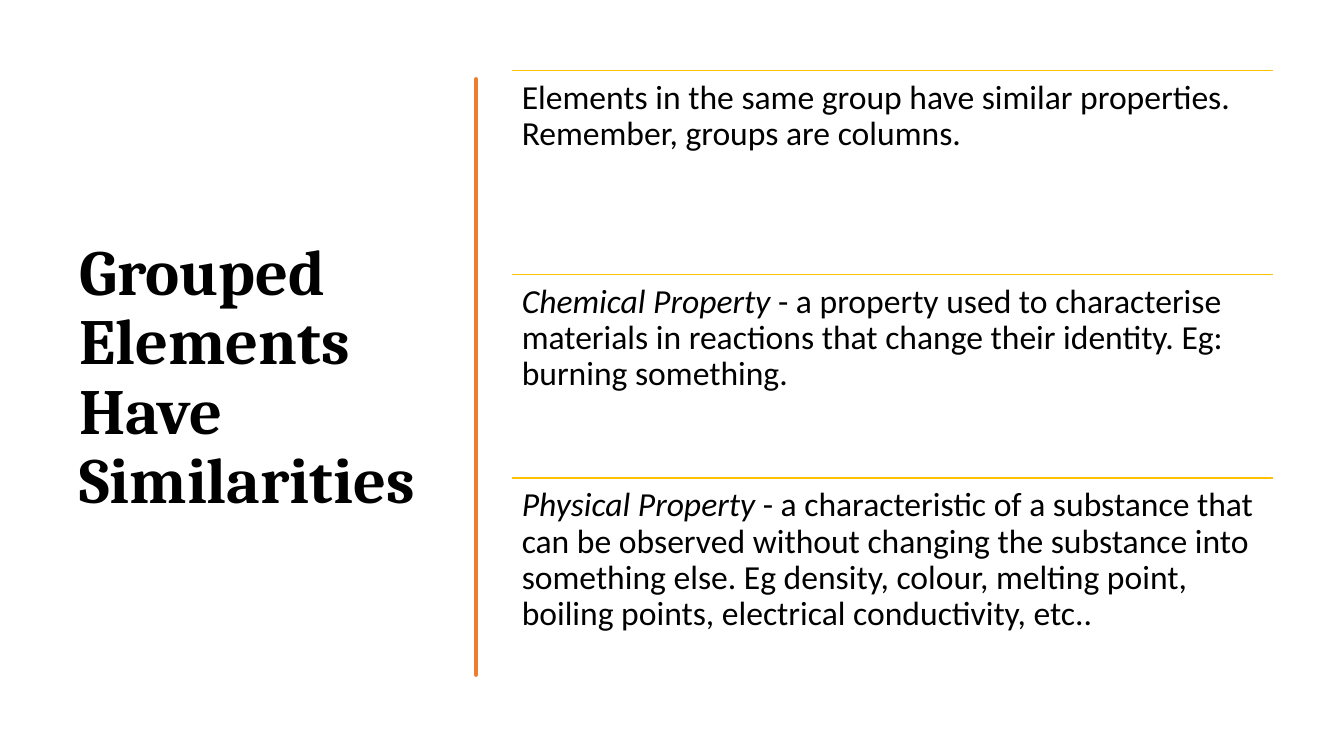
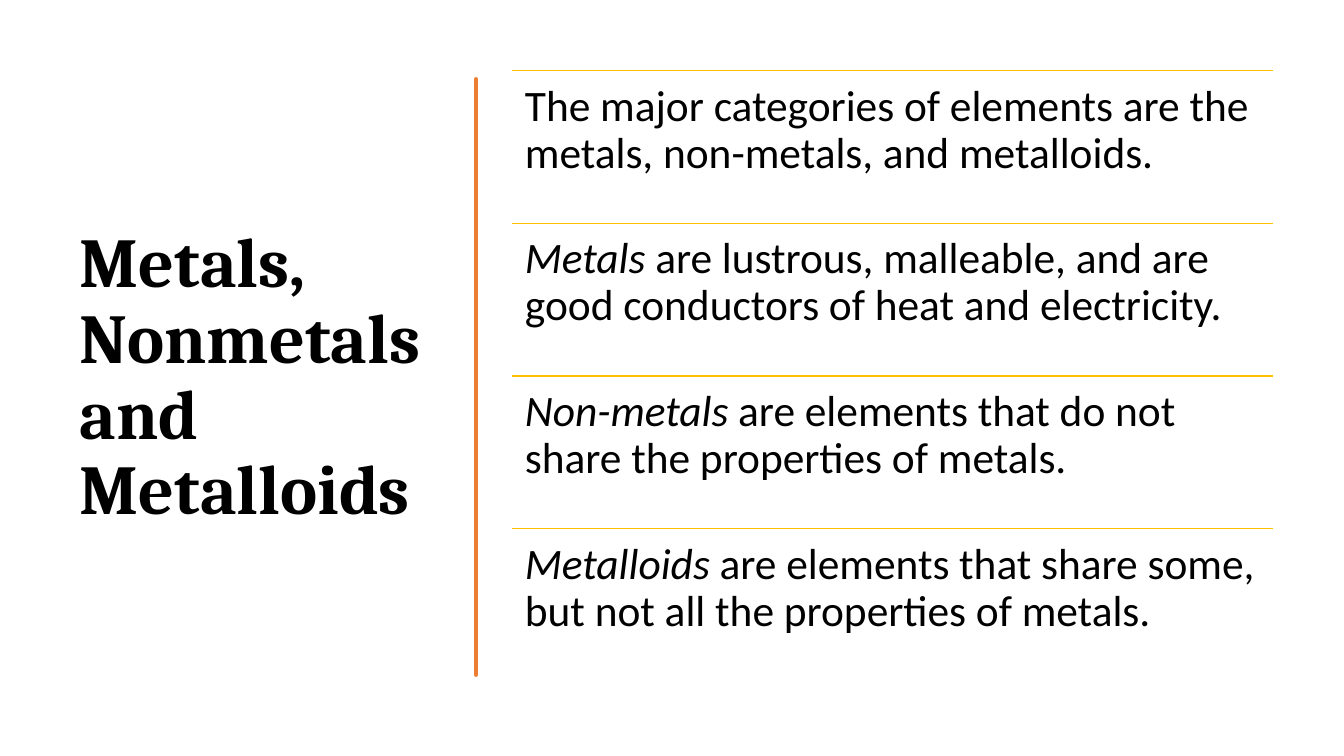
"""Build two slides on element groups: a title, a brush stroke and ruled rows."""
from lxml import etree
from pptx import Presentation, util as u
from pptx.dml.color import RGBColor
from pptx.enum import shapes, text
from pptx.oxml.ns import qn

HUES = {"ink": "000000", "brush": "ED7D31", "rule": "FFC000"}
LEFT, TOP, WIDE, TALL = 12.9, 1.78, 19.18, 15.39
RIM = [(12.07, 2.13), (12.1, 2.9), (12.1, 3.4), (12.04, 4.4), (12.06, 5.7),
       (12.05, 6.6), (12.09, 8.4), (12.07, 9.1), (12.12, 10.4), (12.1, 11.0),
       (12.05, 11.8), (12.06, 12.4), (12.11, 13.6), (12.07, 14.8),
       (12.05, 15.6), (12.07, 17.17), (12.01, 17.17), (12.0, 15.6),
       (12.02, 14.2), (12.0, 12.9), (12.02, 11.6), (11.99, 10.6),
       (12.03, 9.2), (11.99, 7.9), (12.01, 6.4), (12.02, 5.1),
       (11.98, 4.4), (12.03, 3.2), (12.01, 2.13)]
DECK = [
    {"title": "Grouped Elements Have Similarities",
     "head": 46, "size": 24, "pad": 0.25,
     "rows": [
         ("", "Elements in the same group have similar properties. "
              "Remember, groups are columns."),
         ("Chemical Property",
          " - a property used to characterise materials in reactions that "
          "change their identity. Eg: burning something."),
         ("Physical Property",
          " - a characteristic of a substance that can be observed without "
          "changing the substance into something else. Eg density, colour, "
          "melting point, boiling points, electrical conductivity, etc.."),
     ]},
    {"title": "Metals, Nonmetals and Metalloids",
     "head": 50, "size": 31, "pad": 0.33,
     "rows": [
         ("", "The major categories of elements are the metals, non-metals, "
              "and metalloids."),
         ("Metals", " are lustrous, malleable, and are good conductors of "
                    "heat and electricity."),
         ("Non-metals", " are elements that do not share the properties "
                        "of metals."),
         ("Metalloids", " are elements that share some, but not all the "
                        "properties of metals."),
     ]},
]


def style(item, form):
    """Set each format value on an object."""
    for name, value in form.items():
        setattr(item, name, value)


def write(part, words, form):
    """Add a run of text in the ink colour."""
    run = part.add_run()
    run.text = words
    style(run.font, form)
    run.font.color.rgb = RGBColor.from_string(HUES["ink"])


deck = Presentation()
style(deck, {"slide_width": u.Cm(33.87), "slide_height": u.Cm(19.05)})

for page in DECK:
    slide = deck.slides.add_slide(deck.slide_layouts[5])
    title = slide.shapes.title
    style(title, {"left": u.Cm(1.75), "top": u.Cm(TOP),
                  "width": u.Cm(9.5), "height": u.Cm(15.52)})
    style(title.text_frame, {"word_wrap": True,
                             "auto_size": text.MSO_AUTO_SIZE.NONE,
                             "vertical_anchor": text.MSO_ANCHOR.MIDDLE})
    para = title.text_frame.paragraphs[0]
    style(para, {"alignment": text.PP_ALIGN.LEFT, "line_spacing": 0.9})
    write(para, page["title"],
          {"name": "Cambria", "size": u.Pt(page["head"]), "bold": True})

    pen = slide.shapes.build_freeform(*RIM[0], scale=u.Cm(1))
    pen.add_line_segments(RIM[1:], close=True)
    brush = pen.convert_to_shape()
    brush.shadow.inherit = False
    brush.fill.solid()
    brush.fill.fore_color.rgb = RGBColor.from_string(HUES["brush"])
    brush.line.color.rgb = RGBColor.from_string(HUES["brush"])
    brush.line.width = u.Pt(3.25)

    step = TALL / len(page["rows"])
    pad = u.Cm(page["pad"])
    for num, (term, rest) in enumerate(page["rows"]):
        top = u.Cm(TOP + num * step)
        rule = slide.shapes.add_connector(
            shapes.MSO_CONNECTOR.STRAIGHT,
            u.Cm(LEFT), top, u.Cm(LEFT + WIDE), top)
        rule.line.color.rgb = RGBColor.from_string(HUES["rule"])
        rule.line.width = u.Pt(1)
        etree.SubElement(rule.line._get_or_add_ln().getparent(),
                         qn("a:effectLst"))
        box = slide.shapes.add_textbox(u.Cm(LEFT), top, u.Cm(WIDE), u.Cm(step))
        style(box.text_frame, {"word_wrap": True,
                               "margin_left": pad, "margin_right": pad,
                               "margin_top": pad, "margin_bottom": pad})
        para = box.text_frame.paragraphs[0]
        para.line_spacing = 0.9
        for words, slant in ((term, True), (rest, False)):
            if words:
                write(para, words, {"name": "Calibri", "italic": slant,
                                    "size": u.Pt(page["size"])})

deck.save("out.pptx")
